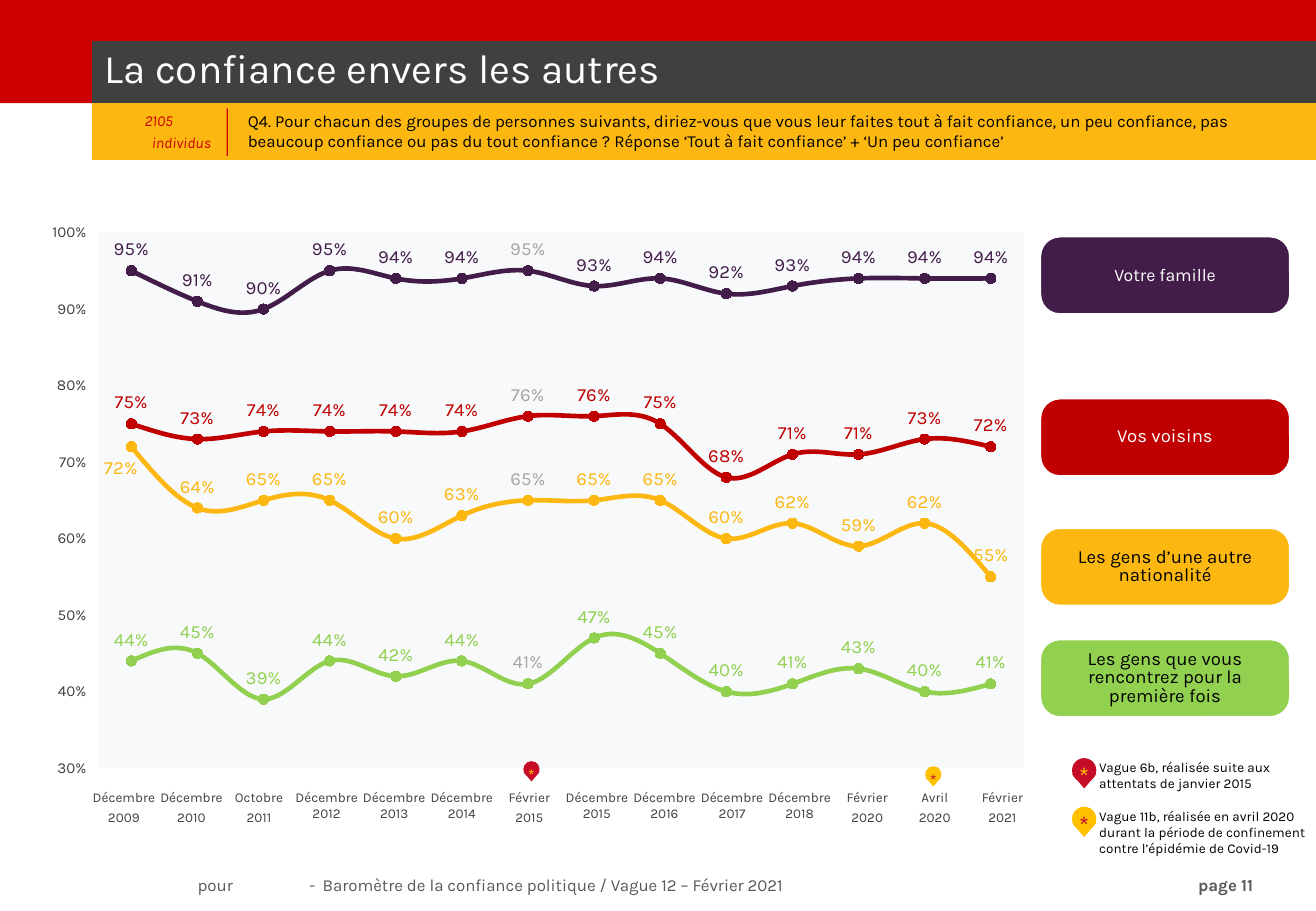
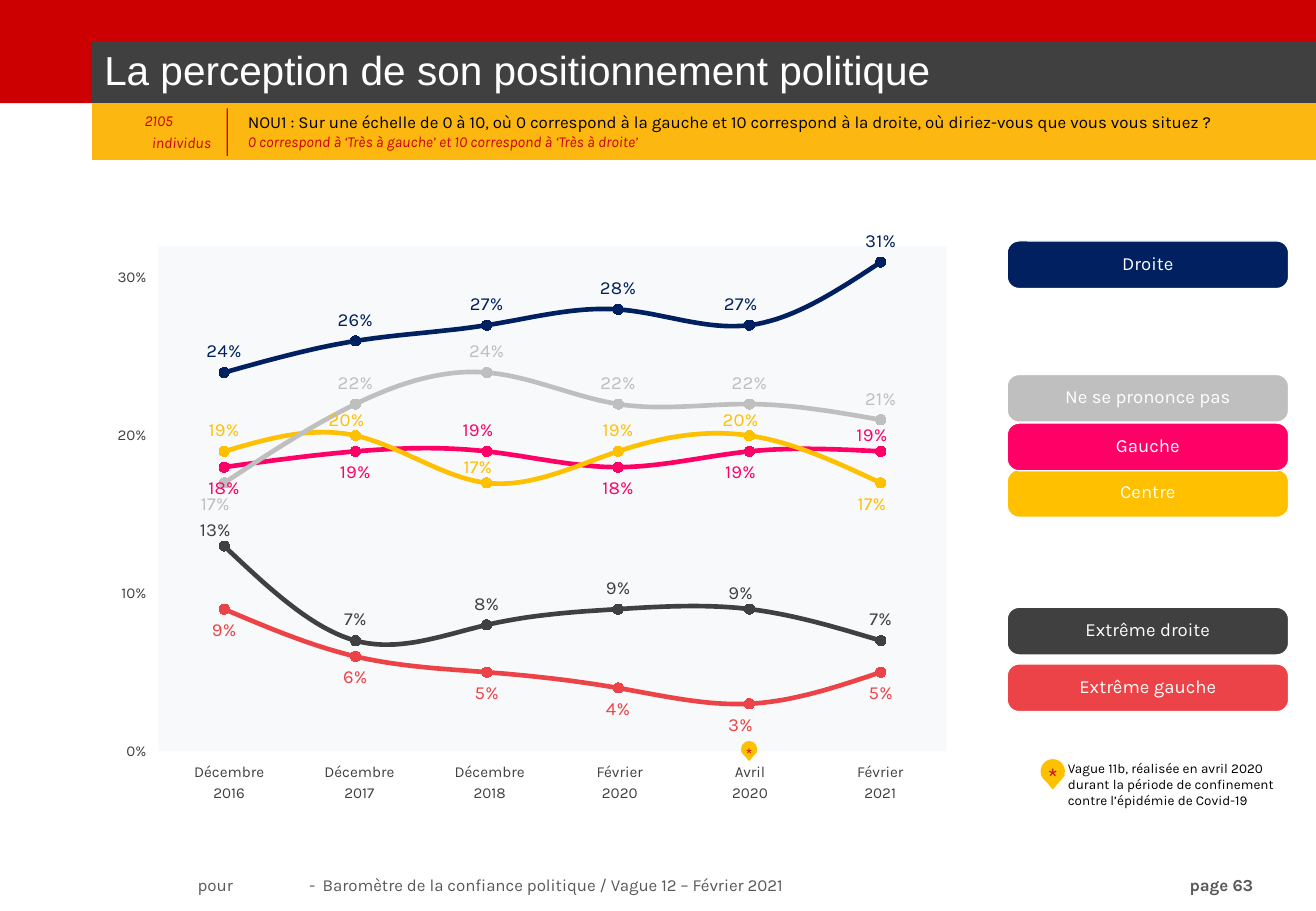
from dataclasses import dataclass
from typing import NamedTuple

from lxml.etree import SubElement
from pptx import Presentation
from pptx.chart.data import CategoryChartData
from pptx.dml.color import RGBColor
from pptx.enum.chart import XL_CHART_TYPE, XL_LABEL_POSITION, XL_MARKER_STYLE, XL_TICK_MARK
from pptx.enum.shapes import MSO_SHAPE
from pptx.enum.text import MSO_ANCHOR, PP_ALIGN
from pptx.oxml import parse_xml
from pptx.oxml.ns import nsdecls, qn
from pptx.util import Inches, Pt

HUES = {
    "red": "CC0000", "gold": "FCB711", "dark": "404040", "white": "FFFFFF",
    "black": "000000", "foot": "595959", "plot": "F8F9FA", "mute": "A6A6A6",
    "plum": "421D49", "brick": "C00000", "lime": "92D050", "coral": "EB4347",
    "pink": "FF0066", "amber": "FFC000", "navy": "002060", "grey": "BFBFBF",
    "crimson": "C60C27",
}
COLS, ROWS = 130, 90
CELL = Inches(7.5) / ROWS
FACE = "Karla"
BARE = "{2D5ABB26-0587-4C30-8999-92F81FD0307C}"
ABOVE, BELOW = XL_LABEL_POSITION.ABOVE, XL_LABEL_POSITION.BELOW


class Box(NamedTuple):
    """A place in columns and rows of the grid."""
    x: float
    y: float
    w: float
    h: float

    def emu(self) -> list[int]:
        return [round(v * CELL) for v in self]


class Line(NamedTuple):
    text: str
    size: float = 10
    ink: str = "black"
    face: str = FACE
    slant: bool = False


class Tag(NamedTuple):
    """A label that departs from its series; dx and dy are shares of the chart."""
    at: int
    side: XL_LABEL_POSITION = ABOVE
    dx: float = -0.01
    dy: float = 0
    ink: str = ""


class Curve(NamedTuple):
    hue: str
    rates: list[int]
    side: XL_LABEL_POSITION = ABOVE
    tags: tuple[Tag, ...] = ()


class Pill(NamedTuple):
    text: str
    hue: str
    y: float
    ink: str = "white"
    size: float = 11


class Pin(NamedTuple):
    x: float
    y: float
    size: float
    hue: str
    star: str


class Note(NamedTuple):
    text: str
    box: Box
    hue: str
    star: str


@dataclass
class Page:
    number: int
    title: Line
    anchor: MSO_ANCHOR
    query: list[Line]
    plot: Box
    share: float
    low: float
    high: float
    curves: list[Curve]
    dates: list[str]
    strip: Box
    small: float
    column: Box
    pills: list[Pill]
    pins: list[Pin]
    notes: list[Note]


def color(name: str) -> RGBColor:
    return RGBColor.from_string(HUES[name])


def style(font, size: float, ink: str, face: str = FACE, slant: bool = False) -> None:
    font.size, font.name, font.italic = Pt(size), face, slant
    font.color.rgb = color(ink)


def write(frame, lines: list[Line], align=PP_ALIGN.LEFT, gap: float = 0) -> None:
    for i, line in enumerate(lines):
        para = frame.add_paragraph() if i else frame.paragraphs[0]
        para.text, para.alignment = line.text, align
        if i and gap:
            para.space_before = Pt(gap)
        style(para.font, line.size, line.ink, line.face, line.slant)


def block(slide, kind, box: Box, hue: str):
    shape = slide.shapes.add_shape(kind, *box.emu())
    shape.shadow.inherit = False
    shape.fill.solid()
    shape.fill.fore_color.rgb = color(hue)
    shape.line.fill.background()
    return shape


def label(slide, box: Box, anchor=MSO_ANCHOR.TOP):
    frame = slide.shapes.add_textbox(*box.emu()).text_frame
    frame.word_wrap, frame.vertical_anchor = True, anchor
    return frame


def grid(slide, box: Box, count: int):
    """Add a one-row table without any style and return its cells."""
    frame = slide.shapes.add_table(1, count, *box.emu())
    frame.table.first_row = frame.table.horz_banding = False
    next(frame._element.iter(qn("a:tableStyleId"))).text = BARE
    return list(frame.table.iter_cells())


def header(slide, page: Page) -> None:
    rect = MSO_SHAPE.RECTANGLE
    block(slide, rect, Box(0, 0, COLS, 10.2), "red")
    block(slide, rect, Box(9.1, 10.2, COLS - 9.1, 5.6), "gold")
    block(slide, rect, Box(22.4, 10.7, 0.12, 4.7), "red")
    base = label(slide, Box(13.1, 11, 9.2, 4))
    base.margin_top = base.margin_bottom = 0
    write(base, [Line(t, 9, "red", slant=True) for t in ("2105", "individus")], gap=2)
    base.paragraphs[1]._p.get_or_add_pPr().set("marL", str(Inches(0.06)))
    cell = grid(slide, Box(9.1, 4, COLS - 9.1, 6.2), 1)[0]
    cell.fill.solid()
    cell.fill.fore_color.rgb = color("dark")
    cell.vertical_anchor = page.anchor
    write(cell.text_frame, [page.title])
    write(label(slide, Box(23.3, 10.2, 104.9, 5.5), MSO_ANCHOR.MIDDLE), page.query)


def footer(slide, number: int) -> None:
    para = label(slide, Box(9.7, 85.8, 120.2, 3.2)).paragraphs[0]
    tabs = SubElement(para._p.get_or_add_pPr(), qn("a:tabLst"))
    for stop, side in ((0.72, "l"), (1.64, "l"), (1.75, "l"), (9.41, "r")):
        SubElement(tabs, qn("a:tab"), pos=str(Inches(stop)), algn=side)
    para.add_run().text = "\tpour\t-\tBaromètre de la confiance politique / Vague 12 – Février 2021\t"
    last = para.add_run()
    last.text, last.font.bold = f"page {number}", True
    style(para.font, 10, "foot")


def layout(**parts) -> object:
    inner = "".join(f'<c:{k} val="{v}"/>' for k, v in parts.items())
    return parse_xml(f'<c:layout {nsdecls("c")}><c:manualLayout>{inner}</c:manualLayout></c:layout>')


def draw(series, curve: Curve) -> None:
    hue = color(curve.hue)
    series.smooth = True
    series.format.line.color.rgb = hue
    series.format.line.width = Pt(2.75)
    mark = series.marker
    mark.style, mark.size = XL_MARKER_STYLE.CIRCLE, 6
    mark.format.fill.solid()
    mark.format.fill.fore_color.rgb = hue
    mark.format.line.color.rgb = hue
    labels = series.data_labels
    labels.show_value, labels.position = True, curve.side
    labels.number_format, labels.number_format_is_linked = "0%", False
    style(labels.font, 11, curve.hue)
    for tag in curve.tags:
        item = series.points[tag.at].data_label
        style(item.font, 11, tag.ink or curve.hue)
        item.position = tag.side
        spot = next(d for d in labels._element.findall(qn("c:dLbl"))
                    if d.find(qn("c:idx")).get("val") == str(tag.at))
        spot.insert(1, layout(x=tag.dx, y=tag.dy))


def graph(slide, page: Page) -> None:
    data = CategoryChartData(number_format="0%")
    data.categories = [str(i + 1) for i in range(len(page.dates))]
    for i, curve in enumerate(page.curves, 1):
        data.add_series(f"Series {i}", [rate / 100 for rate in curve.rates])
    chart = slide.shapes.add_chart(XL_CHART_TYPE.LINE_MARKERS, *page.plot.emu(), data).chart
    chart.has_legend = chart.has_title = False
    style(chart.font, 9, "dark")
    chart.category_axis.visible = False
    axis = chart.value_axis
    axis.minimum_scale, axis.maximum_scale, axis.major_unit = page.low, page.high, 0.1
    axis.has_major_gridlines = False
    axis.major_tick_mark = XL_TICK_MARK.OUTSIDE
    axis.format.line.fill.background()
    axis.tick_labels.number_format = "0%"
    axis.tick_labels.number_format_is_linked = False
    style(axis.tick_labels.font, 9, "dark")
    area = chart._chartSpace.chart.plotArea
    for old in area.findall(qn("c:layout")):
        area.remove(old)
    area.insert(0, layout(layoutTarget="inner", xMode="edge", yMode="edge",
                          x=0.07, y=0.02, w=0.9, h=page.share))
    area.append(parse_xml(
        f'<c:spPr {nsdecls("c", "a")}><a:solidFill><a:srgbClr val="{HUES["plot"]}"/>'
        "</a:solidFill></c:spPr>"))
    for series, curve in zip(chart.plots[0].series, page.curves):
        draw(series, curve)


def calendar(slide, page: Page) -> None:
    for cell, date in zip(grid(slide, page.strip, len(page.dates)), page.dates):
        cell.margin_left = cell.margin_right = Inches(0.01)
        lines = [Line(t, page.small, "dark") for t in date.split("|")]
        write(cell.text_frame, lines, PP_ALIGN.CENTER, 2)


def badge(slide, pill: Pill, column: Box) -> None:
    shape = block(slide, MSO_SHAPE.ROUNDED_RECTANGLE, column._replace(y=pill.y), pill.hue)
    shape.adjustments[0] = 0.25
    shape.line.color.rgb = color("white")
    shape.line.width = Pt(0.75)
    shape.text_frame.vertical_anchor = MSO_ANCHOR.MIDDLE
    write(shape.text_frame, [Line(pill.text, pill.size, pill.ink)], PP_ALIGN.CENTER)
    shape.text_frame.paragraphs[0].line_spacing = Pt(11)


def marker(slide, pin: Pin) -> None:
    x, y, size = pin.x, pin.y, pin.size
    block(slide, MSO_SHAPE.OVAL, Box(x, y, size, size), pin.hue)
    tip = block(slide, MSO_SHAPE.ISOSCELES_TRIANGLE,
                Box(x, y + 0.65 * size, size, 0.6 * size), pin.hue)
    tip.rotation = 180
    frame = label(slide, Box(x, y + 0.5, size, size), MSO_ANCHOR.MIDDLE)
    frame.margin_left = frame.margin_right = frame.margin_top = frame.margin_bottom = 0
    frame.word_wrap = False
    write(frame, [Line("*", round(6.25 * size), pin.star)], PP_ALIGN.CENTER)


def build(slide, page: Page) -> None:
    footer(slide, page.number)
    header(slide, page)
    graph(slide, page)
    calendar(slide, page)
    for pill in page.pills:
        badge(slide, pill, page.column)
    for note in page.notes:
        write(label(slide, note.box), [Line(note.text, 8)])
        marker(slide, Pin(note.box.x - 1.5, note.box.y + 0.5, 2.4, note.hue, note.star))
    for pin in page.pins:
        marker(slide, pin)


MUTED = Tag(6, dx=0, ink="mute")
NEAR = 0.01
COVID = "Vague 11b, réalisée en avril 2020 durant la période de confinement contre l’épidémie de Covid-19"
PAGES = [
    Page(
        11, Line("La confiance envers les autres", 24, "white"), MSO_ANCHOR.TOP,
        [Line("Q4. Pour chacun des groupes de personnes suivants, diriez-vous que vous leur faites tout à fait confiance, un peu confiance, pas beaucoup confiance ou pas du tout confiance ? Réponse ‘Tout à fait confiance’ + ‘Un peu confiance’")],
        Box(2.6, 21.8, 101.6, 58.8), 0.9, 0.3, 1,
        [Curve("plum", [95, 91, 90, 95, 94, 94, 95, 93, 94, 92, 93, 94, 94, 94], tags=(MUTED,)),
         Curve("brick", [75, 73, 74, 74, 74, 74, 76, 76, 75, 68, 71, 71, 73, 72], tags=(MUTED,)),
         Curve("gold", [72, 64, 65, 65, 60, 63, 65, 65, 65, 60, 62, 59, 62, 55],
               tags=(Tag(0, BELOW), MUTED)),
         Curve("lime", [44, 45, 39, 44, 42, 44, 41, 47, 45, 40, 41, 43, 40, 41], tags=(MUTED,))],
        ["Décembre|2009", "Décembre|2010", "Octobre|2011", "Décembre 2012", "Décembre 2013",
         "Décembre 2014", "Février|2015", "Décembre 2015", "Décembre 2016", "Décembre 2017",
         "Décembre 2018", "Février|2020", "Avril|2020", "Février|2021"],
        Box(8.9, 77.5, 93.5, 4.7), 8, Box(102.8, 0, 24.6, 7.6),
        [Pill("Votre famille", "plum", 23.4, size=10.5), Pill("Vos voisins", "brick", 39.4),
         Pill("Les gens d’une autre nationalité", "gold", 52.2, "black"),
         Pill("Les gens que vous rencontrez pour la première fois", "lime", 63.2, "black")],
        [Pin(51.7, 75.2, 1.6, "crimson", "amber"), Pin(91.4, 75.7, 1.6, "amber", "crimson")],
        [Note("Vague 6b, réalisée suite aux attentats de janvier 2015",
              Box(107.4, 74.4, 20.8, 4.4), "crimson", "amber"),
         Note(COVID, Box(107.4, 79.2, 22.9, 6), "amber", "crimson")]),
    Page(
        63, Line("La perception de son positionnement politique", 24, "white", "Arial"),
        MSO_ANCHOR.MIDDLE,
        [Line("NOU1 : Sur une échelle de 0 à 10, où 0 correspond à la gauche et 10 correspond à la droite, où diriez-vous que vous vous situez ?"),
         Line("0 correspond à ‘Très à gauche’ et 10 correspond à ‘Très à droite’", 9, "red", slant=True)],
        Box(9.6, 22.7, 86.5, 54.2), 0.93, 0, 0.32,
        [Curve("coral", [9, 6, 5, 4, 3, 5], BELOW, (Tag(4, BELOW),)),
         Curve("pink", [18, 19, 19, 18, 19, 19], BELOW, (Tag(2), Tag(4, BELOW), Tag(5, dy=NEAR))),
         Curve("amber", [19, 20, 17, 19, 20, 17],
               tags=(Tag(1, dy=NEAR), Tag(2, dy=NEAR), Tag(4, dy=NEAR), Tag(5, BELOW))),
         Curve("navy", [24, 26, 27, 28, 27, 31], tags=(Tag(4),)),
         Curve("dark", [13, 7, 8, 9, 9, 7], tags=(Tag(0, dy=NEAR), Tag(4, dy=NEAR))),
         Curve("grey", [17, 22, 24, 22, 22, 21], tags=(Tag(0, BELOW),))],
        ["Décembre|2016", "Décembre|2017", "Décembre|2018", "Février|2020", "Avril|2020",
         "Février|2021"],
        Box(16.2, 74.8, 77.2, 5.2), 9, Box(99.5, 0, 27.8, 4.7),
        [Pill("Extrême droite", "dark", 60), Pill("Extrême gauche", "coral", 65.6),
         Pill("Centre", "amber", 46.4), Pill("Droite", "navy", 23.8),
         Pill("Gauche", "pink", 41.8), Pill("Ne se prononce pas", "grey", 37)],
        [Pin(73.2, 73.2, 1.6, "amber", "crimson")],
        [Note(COVID, Box(104.3, 74.5, 22.9, 6), "amber", "crimson")]),
]


def main() -> None:
    deck = Presentation()
    deck.slide_width, deck.slide_height = round(COLS * CELL), round(ROWS * CELL)
    for page in PAGES:
        build(deck.slides.add_slide(deck.slide_layouts[6]), page)
    deck.save("out.pptx")


if __name__ == "__main__":
    main()
